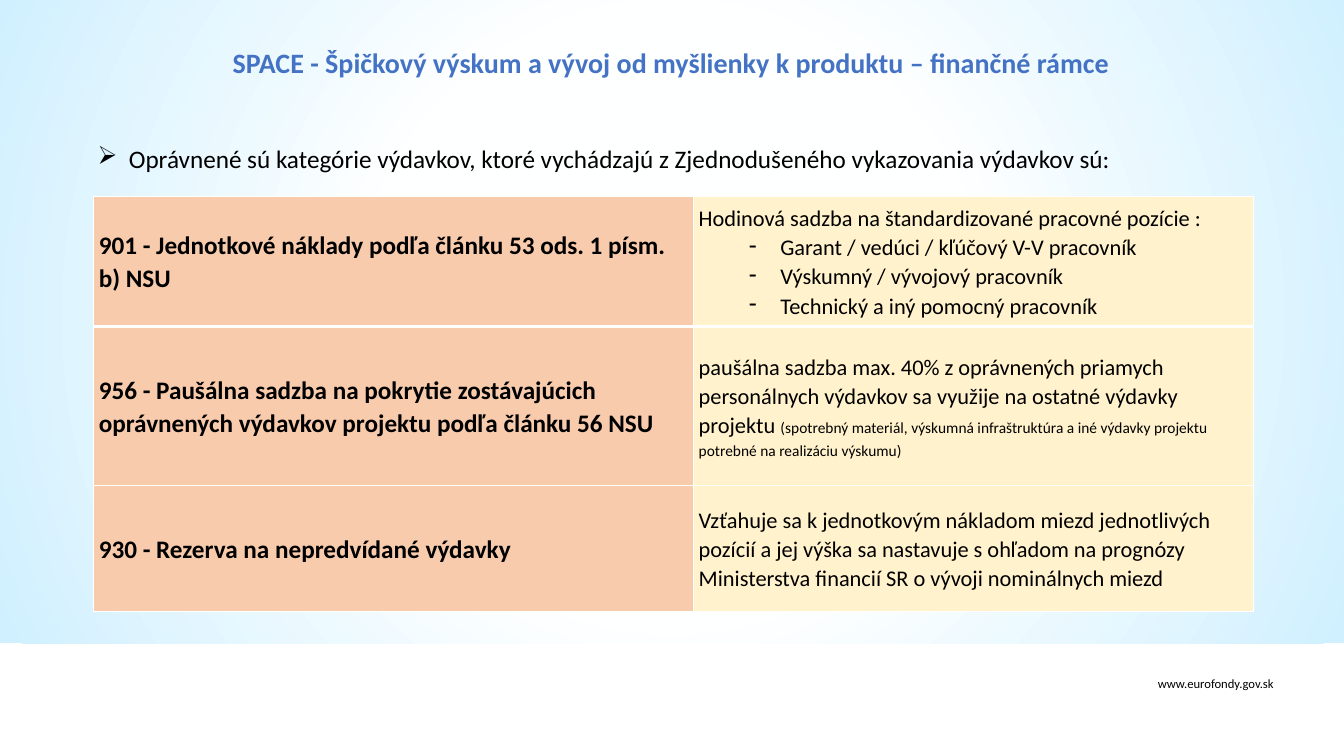
from dataclasses import dataclass

from lxml import etree
from pptx import Presentation
from pptx.dml.color import RGBColor
from pptx.enum.shapes import MSO_SHAPE
from pptx.enum.text import MSO_ANCHOR, PP_ALIGN
from pptx.oxml import parse_xml
from pptx.oxml.ns import qn
from pptx.util import Pt

RECTANGLE = MSO_SHAPE.RECTANGLE
MIDDLE = MSO_ANCHOR.MIDDLE
LEFT, CENTER, RIGHT = PP_ALIGN.LEFT, PP_ALIGN.CENTER, PP_ALIGN.RIGHT

EMU_PER_PX = 9144  # 100 px to the inch
FONT = "Calibri"
COLORS = {
    "title": "4472C4",
    "text": "000000",
    "category": "F8CBAD",
    "detail": "FFF2CC",
    "border": "FFFFFF",
    "glow": "FEFFFF",
    "sky": "D0F0FF",
}
DRAWING_NS = "http://schemas.openxmlformats.org/drawingml/2006/main"


@dataclass(frozen=True)
class Run:
    text: str
    size: int
    bold: bool = False
    color: str = "text"


@dataclass(frozen=True)
class Para:
    runs: tuple[Run, ...]
    align: PP_ALIGN = LEFT
    bullet: str = ""
    indent: int = 0
    spacing: float = 1.0


@dataclass(frozen=True)
class Label:
    box: tuple[int, int, int, int]
    para: Para


@dataclass(frozen=True)
class Expense:
    height: int
    category: str
    details: tuple[Para, ...]
    border_below: int = 1


HANGING = 31
CELL_SPACING = 1.07


def detail(*runs: Run) -> Para:
    return Para(runs, spacing=CELL_SPACING)


def position(name: str) -> Para:
    """Describe one job position listed under the hourly rate."""
    return Para((Run(name, 16),), bullet="-", indent=81, spacing=CELL_SPACING)


LABELS = (
    Label((1073, 666, 200, 25), Para((Run("www.eurofondy.gov.sk", 9),), RIGHT)),
    Label((87, 40, 1157, 44), Para((Run(
        "SPACE - Špičkový výskum a vývoj od myšlienky k produktu – finančné rámce",
        20, True, "title"),), CENTER)),
    Label((87, 137, 1157, 40), Para((Run(
        "Oprávnené sú kategórie výdavkov, ktoré vychádzajú z Zjednodušeného "
        "vykazovania výdavkov sú:", 18),), bullet="➢", indent=HANGING)),
)

EXPENSES = (
    Expense(129, "901 - Jednotkové náklady podľa článku 53 ods. 1 písm. b) NSU", (
        detail(Run("Hodinová sadzba na štandardizované pracovné pozície :", 16)),
        position("Garant / vedúci / kľúčový V-V pracovník"),
        position("Výskumný / vývojový pracovník"),
        position("Technický a iný pomocný pracovník"),
    ), border_below=3),
    Expense(158, "956 - Paušálna sadzba na pokrytie zostávajúcich oprávnených "
                 "výdavkov projektu podľa článku 56 NSU", (
        detail(
            Run("paušálna sadzba max. 40% z oprávnených priamych personálnych "
                "výdavkov sa využije na ostatné výdavky projektu ", 16),
            Run("(spotrebný materiál, výskumná infraštruktúra a iné výdavky "
                "projektu potrebné na realizáciu výskumu)", 11)),
    )),
    Expense(125, "930 - Rezerva na nepredvídané výdavky", (
        detail(Run("Vzťahuje sa k jednotkovým nákladom miezd jednotlivých pozícií "
                   "a jej výška sa nastavuje s ohľadom na prognózy Ministerstva "
                   "financií SR o vývoji nominálnych miezd", 16)),
    )),
)
COLUMN_WIDTHS = (595, 555)
TABLE_LEFT, TABLE_TOP = 93, 195


def px(length: int) -> int:
    return length * EMU_PER_PX


def set_all(target, values: dict) -> None:
    for name, value in values.items():
        setattr(target, name, value)


def write_paragraphs(frame, paras: tuple[Para, ...]) -> None:
    for index, para in enumerate(paras):
        paragraph = frame.add_paragraph() if index else frame.paragraphs[0]
        if para.bullet:
            properties = paragraph._p.get_or_add_pPr()
            properties.set("marL", str(px(para.indent)))
            properties.set("indent", str(-px(HANGING)))
            etree.SubElement(properties, qn("a:buChar"), char=para.bullet)
        set_all(paragraph, {"alignment": para.align, "line_spacing": para.spacing})
        for part in para.runs:
            run = paragraph.add_run()
            run.text = part.text
            set_all(run.font, {"name": FONT, "size": Pt(part.size), "bold": part.bold})
            run.font.color.rgb = RGBColor.from_string(COLORS[part.color])


def add_label(slide, label: Label) -> None:
    frame = slide.shapes.add_textbox(*map(px, label.box)).text_frame
    frame.word_wrap = True
    write_paragraphs(frame, (label.para,))


def add_background(slide) -> None:
    """Draw the panel whose white centre fades to pale blue."""
    panel = slide.shapes.add_shape(RECTANGLE, *map(px, (0, -10, 1335, 648)))
    panel.shadow.inherit = False
    panel.line.fill.background()
    stops = "".join(
        f'<a:gs pos="{percent * 1000}"><a:srgbClr val="{COLORS[color]}"/></a:gs>'
        for percent, color in ((0, "glow"), (40, "glow"), (100, "sky")))
    gradient = parse_xml(
        f'<a:gradFill xmlns:a="{DRAWING_NS}" rotWithShape="1"><a:gsLst>{stops}</a:gsLst>'
        '<a:path path="circle"><a:fillToRect l="50000" t="50000" r="50000" b="50000"/>'
        '</a:path></a:gradFill>')
    panel._element.spPr.find(qn("a:prstGeom")).addnext(gradient)


def add_borders(cell, above: int, below: int) -> None:
    properties = cell._tc.get_or_add_tcPr()
    for side, points in (("L", 1), ("R", 1), ("T", above), ("B", below)):
        line = etree.SubElement(properties, qn(f"a:ln{side}"), w=str(Pt(points)))
        fill = etree.SubElement(line, qn("a:solidFill"))
        etree.SubElement(fill, qn("a:srgbClr"), val=COLORS["border"])


def add_expense_table(slide) -> None:
    height = sum(expense.height for expense in EXPENSES)
    table = slide.shapes.add_table(
        len(EXPENSES), len(COLUMN_WIDTHS),
        *map(px, (TABLE_LEFT, TABLE_TOP, sum(COLUMN_WIDTHS), height))).table
    set_all(table, {"first_row": False, "horz_banding": False})
    for column, width in zip(table.columns, COLUMN_WIDTHS):
        column.width = px(width)
    border_above = 1
    for row, expense in zip(table.rows, EXPENSES):
        row.height = px(expense.height)
        category = Para((Run(expense.category, 18, True),), spacing=CELL_SPACING)
        contents = (("category", (category,)), ("detail", expense.details))
        for cell, (color, paras) in zip(row.cells, contents):
            set_all(cell, {"vertical_anchor": MIDDLE, "margin_left": px(5),
                           "margin_right": px(5), "margin_top": 0, "margin_bottom": 0})
            add_borders(cell, border_above, expense.border_below)
            cell.fill.solid()
            cell.fill.fore_color.rgb = RGBColor.from_string(COLORS[color])
            write_paragraphs(cell.text_frame, paras)
        border_above = expense.border_below


def main() -> None:
    deck = Presentation()
    set_all(deck, {"slide_width": px(1333), "slide_height": px(750)})
    slide = deck.slides.add_slide(deck.slide_layouts[6])
    add_background(slide)
    for label in LABELS:
        add_label(slide, label)
    add_expense_table(slide)
    deck.save("out.pptx")


if __name__ == "__main__":
    main()
